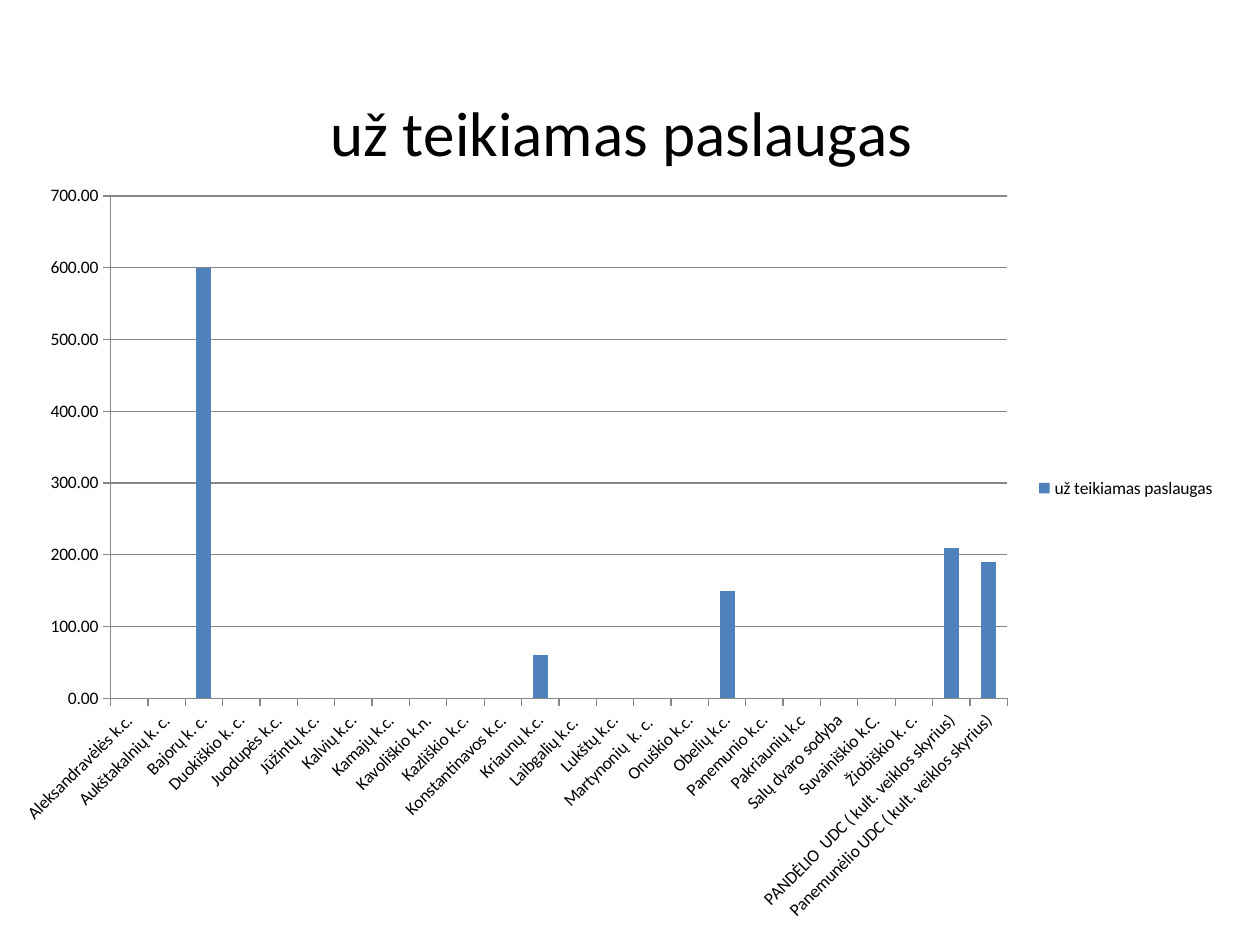
import pptx
import pptx.util
import pptx.chart.data
import pptx.dml.color
import pptx.enum.chart
import pptx.oxml
import pptx.oxml.ns


def color(hex_value):
    return pptx.dml.color.RGBColor.from_string(hex_value)


def place(element, position, shares):
    for old in element.findall(pptx.oxml.ns.qn("c:layout")):
        element.remove(old)
    modes = "".join(f'<c:{key}Mode val="edge"/>' for key in "xy")
    values = "".join(f'<c:{key} val="{share}"/>' for key, share in shares.items())
    target = '<c:layoutTarget val="inner"/>' if "w" in shares else ""
    element.insert(position, pptx.oxml.parse_xml(
        f'<c:layout {pptx.oxml.ns.nsdecls("c")}><c:manualLayout>'
        f"{target}{modes}{values}</c:manualLayout></c:layout>"))


deck = pptx.Presentation()
deck.slide_width = pptx.util.Inches(10)
deck.slide_height = pptx.util.Inches(7.5)
slide = deck.slides.add_slide(deck.slide_layouts[6])

heading = "už teikiamas paslaugas"
centres = [
    "Aleksandravėlės k.c.", "Aukštakalnių k. c.", "Bajorų k. c.",
    "Duokiškio k. c.", "Juodupės k.c.", "Jūžintų k.c.", "Kalvių k.c.",
    "Kamajų k.c.", "Kavoliškio k.n.", "Kazliškio k.c.",
    "Konstantinavos k.c.", "Kriaunų k.c.", "Laibgalių k.c. ",
    "Lukštų k.c.", "Martynonių  k. c. ", "Onuškio k.c.", "Obelių k.c.",
    "Panemunio k.c.", "Pakriaunių k.c", "Salų dvaro sodyba",
    "Suvainiškio k.C.", "Žiobiškio k. c.",
    "PANDĖLIO  UDC ( kult. veiklos skyrius)",
    "Panemunėlio UDC ( kult. veiklos skyrius)",
]
income = {2: 600, 11: 60, 16: 150, 22: 210, 23: 190}

services = pptx.chart.data.CategoryChartData(number_format="#,##0.00")
services.categories = centres
services.add_series(heading, [income.get(i, 0) for i in range(len(centres))])

chart = slide.shapes.add_chart(
    pptx.enum.chart.XL_CHART_TYPE.COLUMN_CLUSTERED,
    0, int(deck.slide_height / 30),
    int(deck.slide_width * 0.975), int(deck.slide_height * 29 / 30),
    services).chart
chart.font.name = "Calibri"
chart.font.size = pptx.util.Pt(10)
chart.font.color.rgb = color("000000")

chart.has_title = True
chart.chart_title.include_in_layout = False
headline = chart.chart_title.text_frame
headline.text = heading
title_format = {"name": "Calibri", "size": pptx.util.Pt(36), "bold": False}
for key, value in title_format.items():
    setattr(headline.paragraphs[0].runs[0].font, key, value)
headline.paragraphs[0].runs[0].font.color.rgb = color("000000")

chart.has_legend = True
chart.legend.position = pptx.enum.chart.XL_LEGEND_POSITION.RIGHT
chart.legend.include_in_layout = False

columns = chart.plots[0]
columns.gap_width = 150
columns.vary_by_categories = False
columns.series[0].format.fill.solid()
columns.series[0].format.fill.fore_color.rgb = color("4F81BD")

amounts, places = chart.value_axis, chart.category_axis
amount_format = {"minimum_scale": 0, "maximum_scale": 700, "major_unit": 100,
                 "has_major_gridlines": True}
for key, value in amount_format.items():
    setattr(amounts, key, value)
amounts.tick_labels.number_format = "#,##0.00"
amounts.tick_labels.number_format_is_linked = False
for axis in (amounts, places):
    axis.major_tick_mark = pptx.enum.chart.XL_TICK_MARK.OUTSIDE
for line in (amounts.format.line, places.format.line,
             amounts.major_gridlines.format.line):
    line.color.rgb = color("878787")
    line.width = pptx.util.Pt(0.75)
places.tick_labels.font.size = pptx.util.Pt(10)
slant = places._element.find(".//" + pptx.oxml.ns.qn("a:bodyPr"))
slant.set("rot", "-2700000")
slant.set("vert", "horz")

place(chart.chart_title._element, 1, {"x": 0.26, "y": 0.05})
plot_area = chart._chartSpace.find(".//" + pptx.oxml.ns.qn("c:plotArea"))
place(plot_area, 0, {"x": 0.09, "y": 0.18, "w": 0.73, "h": 0.55})

deck.save("out.pptx")
